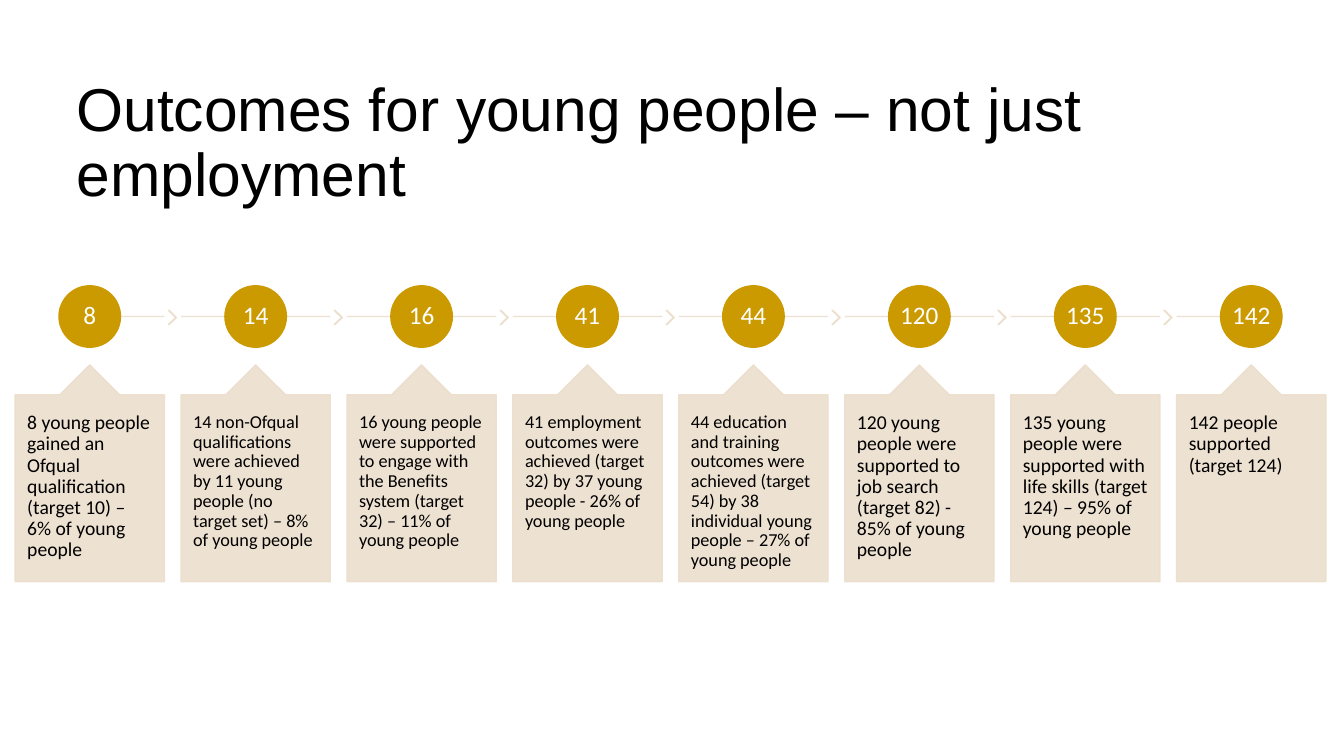
from dataclasses import dataclass

from lxml.etree import SubElement
from pptx import Presentation
from pptx.dml.color import RGBColor
from pptx.enum.shapes import MSO_CONNECTOR, MSO_SHAPE
from pptx.enum.text import MSO_ANCHOR, PP_ALIGN
from pptx.oxml.ns import qn
from pptx.shapes.autoshape import Shape
from pptx.shapes.base import BaseShape
from pptx.slide import Slide
from pptx.util import Inches, Pt


@dataclass(frozen=True)
class Theme:
    gold: RGBColor = RGBColor(0xCB, 0x99, 0x00)
    sand: RGBColor = RGBColor(0xEC, 0xDE, 0xCC)
    ink: RGBColor = RGBColor(0, 0, 0)
    paper: RGBColor = RGBColor(0xFF, 0xFF, 0xFF)
    title_font: str = "Arial"
    body_font: str = "Calibri"
    title_size: float = 43.2
    number_size: float = 18
    body_size: float = 14
    small_size: float = 13
    line_width: float = 1
    sand_opacity: int = 90


@dataclass(frozen=True)
class Outcome:
    number: int
    description: str
    size: float


THEME = Theme()
OUTCOMES = [
    Outcome(8, "8 young people gained an Ofqual qualification (target 10) – "
               "6% of young people", THEME.body_size),
    Outcome(14, "14 non-Ofqual qualifications were achieved by 11 young people "
                "(no target set) – 8% of young people", THEME.small_size),
    Outcome(16, "16 young people were supported to engage with the Benefits system "
                "(target 32) – 11% of young people", THEME.small_size),
    Outcome(41, "41 employment outcomes were achieved (target 32) by 37 young people "
                "- 26% of young people", THEME.small_size),
    Outcome(44, "44 education and training outcomes were achieved (target 54) by "
                "38 individual young people – 27% of young people", THEME.small_size),
    Outcome(120, "120 young people were supported to job search (target 82) - "
                 "85% of young people", THEME.body_size),
    Outcome(135, "135 young people were supported with life skills (target 124) – "
                 "95% of young people", THEME.body_size),
    Outcome(142, "142 people supported (target 124)", THEME.body_size),
]

# Timeline geometry, in inches
FIRST_LEFT, LAST_LEFT = 0.15, 11.67
PITCH = (LAST_LEFT - FIRST_LEFT) / (len(OUTCOMES) - 1)
CARD_WIDTH, CARD_TOP, CARD_HEIGHT = 1.48, 3.62, 2.15
CIRCLE = 0.61
AXIS_Y = 3.14
CHEVRON_OFFSET, CHEVRON_WIDTH, CHEVRON_HEIGHT = 1.52, 0.08, 0.14


def write(shape: Shape, text: str, font: str, size: float, color: RGBColor,
          align: PP_ALIGN, anchor: MSO_ANCHOR, inset_x: float, inset_y: float) -> None:
    frame = shape.text_frame
    frame.text = text
    frame.word_wrap = True
    frame.vertical_anchor = anchor
    frame.margin_left = frame.margin_right = Inches(inset_x)
    frame.margin_top = frame.margin_bottom = Inches(inset_y)
    paragraph = frame.paragraphs[0]
    paragraph.alignment = align
    paragraph.line_spacing = 0.9
    run_font = paragraph.runs[0].font
    run_font.name, run_font.size = font, Pt(size)
    run_font.color.rgb = color


def soften(shape: BaseShape) -> None:
    """Apply the sand opacity to the fill and line."""
    for color in shape.element.spPr.iter(qn("a:srgbClr")):
        SubElement(color, qn("a:alpha")).set("val", str(THEME.sand_opacity * 1000))


def add_block(slide: Slide, kind: MSO_SHAPE, left: float, top: float,
              width: float, height: float, color: RGBColor) -> Shape:
    block = slide.shapes.add_shape(
        kind, Inches(left), Inches(top), Inches(width), Inches(height))
    block.fill.solid()
    block.fill.fore_color.rgb = color
    block.line.color.rgb = color
    block.line.width = Pt(THEME.line_width)
    block.shadow.inherit = False
    return block


def add_axis(slide: Slide, start: float, end: float) -> None:
    axis = slide.shapes.add_connector(
        MSO_CONNECTOR.STRAIGHT, Inches(start), Inches(AXIS_Y), Inches(end), Inches(AXIS_Y))
    axis.line.color.rgb = THEME.sand
    axis.line.width = Pt(THEME.line_width)
    SubElement(axis.element.spPr, qn("a:effectLst"))
    soften(axis)


def add_outcome(slide: Slide, index: int, outcome: Outcome) -> None:
    left = FIRST_LEFT + index * PITCH
    center = left + CARD_WIDTH / 2
    is_first, is_last = index == 0, index == len(OUTCOMES) - 1

    # Timeline segment and the chevron to the next outcome
    add_axis(slide, center if is_first else left,
             center if is_last else left + CARD_WIDTH)
    if not is_last:
        chevron = add_block(slide, MSO_SHAPE.CHEVRON, left + CHEVRON_OFFSET, 3.08,
                            CHEVRON_WIDTH, CHEVRON_HEIGHT, THEME.sand)
        chevron.adjustments[0] = 0.9
        soften(chevron)

    # Numbered circle
    circle = add_block(slide, MSO_SHAPE.OVAL, center - CIRCLE / 2, AXIS_Y - CIRCLE / 2,
                       CIRCLE, CIRCLE, THEME.gold)
    write(circle, str(outcome.number), THEME.body_font, THEME.number_size, THEME.paper,
          PP_ALIGN.CENTER, MSO_ANCHOR.MIDDLE, 0.02, 0.02)

    # Callout card
    card = add_block(slide, MSO_SHAPE.UP_ARROW_CALLOUT, left, CARD_TOP,
                     CARD_WIDTH, CARD_HEIGHT, THEME.sand)
    for position, value in enumerate((0.5, 0.2, 0.2, 1)):
        card.adjustments[position] = value
    soften(card)
    write(card, outcome.description, THEME.body_font, outcome.size, THEME.ink,
          PP_ALIGN.LEFT, MSO_ANCHOR.TOP, 0.12, 0.18)


def main() -> None:
    deck = Presentation()
    deck.slide_width, deck.slide_height = Inches(13.33), Inches(7.5)
    slide = deck.slides.add_slide(deck.slide_layouts[6])

    # Title
    title = slide.shapes.add_textbox(Inches(0.66), Inches(1.11), Inches(11.5), Inches(1.02))
    write(title, "Outcomes for young people – not just employment", THEME.title_font,
          THEME.title_size, THEME.ink, PP_ALIGN.LEFT, MSO_ANCHOR.BOTTOM, 0.1, 0.05)

    # Timeline
    for index, outcome in enumerate(OUTCOMES):
        add_outcome(slide, index, outcome)

    deck.save("out.pptx")


if __name__ == "__main__":
    main()
